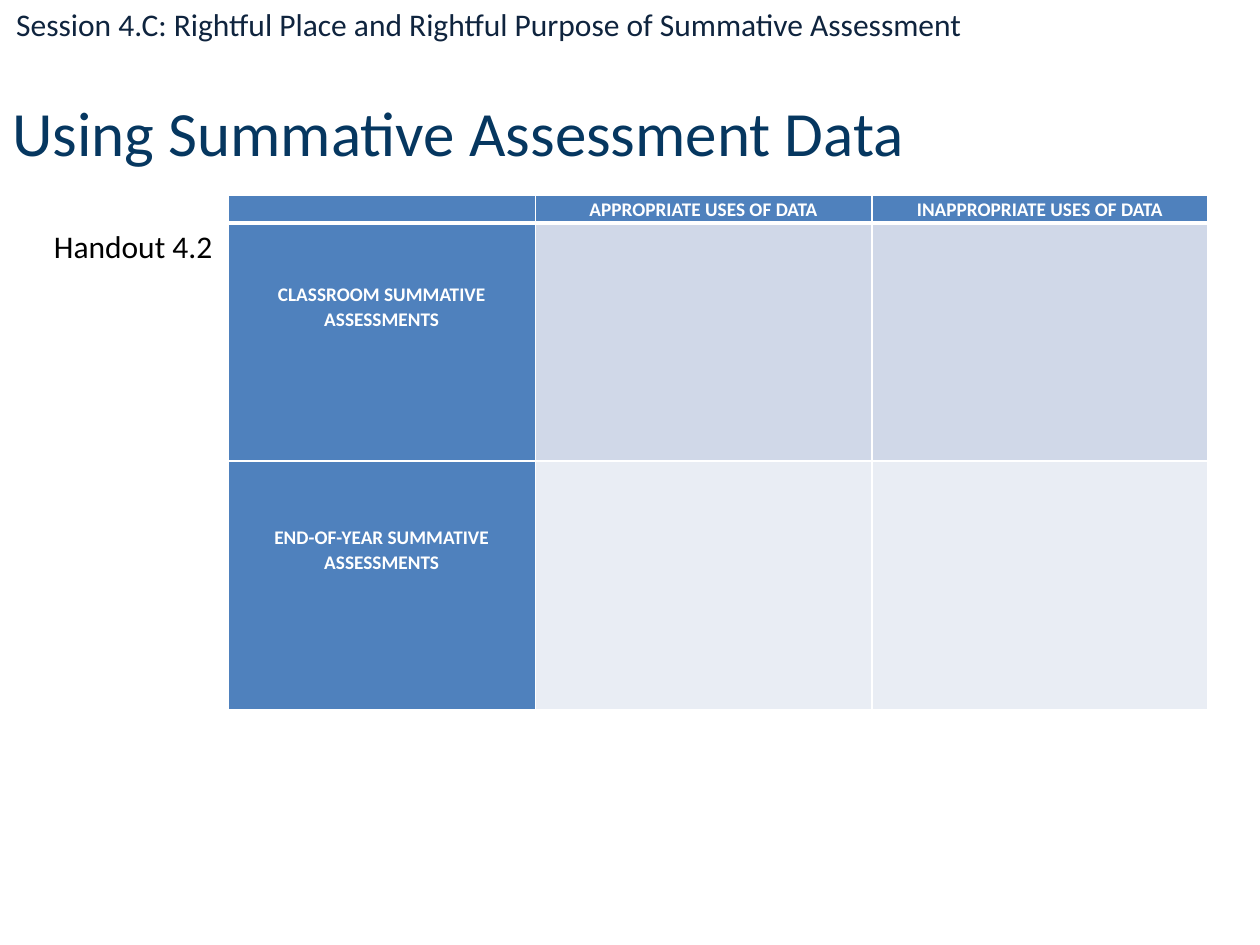
from lxml import etree
from pptx import Presentation
from pptx.dml.color import RGBColor
from pptx.enum import text
from pptx.oxml import ns
from pptx.util import Inches, Pt

FONT = "Calibri"
WHITE = RGBColor(0xFF, 0xFF, 0xFF)
BLACK = RGBColor(0, 0, 0)
TITLE_BLUE = RGBColor(0x06, 0x37, 0x60)
SESSION_NAVY = RGBColor(0x0F, 0x24, 0x3E)
HEADER_BLUE = RGBColor(0x4F, 0x81, 0xBD)
BAND_DARK = RGBColor(0xD0, 0xD8, 0xE8)
BAND_LIGHT = RGBColor(0xE9, 0xED, 0xF4)

COLUMN_WIDTHS = [2.44, 2.67, 2.67]
ROW_HEIGHTS = [0.22, 1.89, 1.97]
ROWS = [
    ["", "APPROPRIATE USES OF DATA", "INAPPROPRIATE USES OF DATA"],
    ["CLASSROOM SUMMATIVE ASSESSMENTS", "", ""],
    ["END-OF-YEAR SUMMATIVE ASSESSMENTS", "", ""],
]
ROW_FILLS = [HEADER_BLUE, BAND_DARK, BAND_LIGHT]
CELL_SIZE = 11
LABEL_LIFT = 0.56  # bottom margin that raises the row labels above centre


def write(frame, words, size, color, bold=False, align=None, line_spacing=None):
    paragraph = frame.paragraphs[0]
    paragraph.alignment = align
    paragraph.line_spacing = line_spacing
    run = paragraph.add_run()
    run.text = words
    run.font.name = FONT
    run.font.size = Pt(size)
    run.font.bold = bold
    run.font.color.rgb = color


def add_label(slide, words, left, top, width, height, wrap=False,
              anchor=text.MSO_ANCHOR.TOP, **style):
    box = slide.shapes.add_textbox(*map(Inches, (left, top, width, height)))
    box.text_frame.word_wrap = wrap
    box.text_frame.vertical_anchor = anchor
    write(box.text_frame, words, **style)


def set_borders(cell, widths):
    """Draw white cell borders; widths maps L, R, T, B to points."""
    properties = cell._tc.get_or_add_tcPr()
    for side in "LRTB":
        line = etree.SubElement(properties, ns.qn(f"a:ln{side}"), w=str(Pt(widths[side])))
        fill = etree.SubElement(line, ns.qn("a:solidFill"))
        etree.SubElement(fill, ns.qn("a:srgbClr"), val=str(WHITE))


def format_cell(cell, words, row, column):
    is_row_label = row > 0 and column == 0
    set_borders(cell, {"L": 1, "R": 1,
                       "T": 3 if row == 1 else 1,
                       "B": 3 if row == 0 else 1})
    cell.fill.solid()
    cell.fill.fore_color.rgb = HEADER_BLUE if is_row_label else ROW_FILLS[row]
    cell.vertical_anchor = text.MSO_ANCHOR.MIDDLE
    cell.margin_left = cell.margin_right = Inches(0.07)
    cell.margin_top = 0
    cell.margin_bottom = Inches(LABEL_LIFT if is_row_label else 0)
    if words:
        write(cell.text_frame, words, CELL_SIZE, WHITE, bold=True,
              align=text.PP_ALIGN.CENTER, line_spacing=1.06)
    else:
        # An empty cell needs a small font so that it does not stretch its row.
        end = etree.SubElement(cell.text_frame.paragraphs[0]._p, ns.qn("a:endParaRPr"))
        end.set("sz", str(CELL_SIZE * 100))


def add_uses_table(slide, left, top):
    table = slide.shapes.add_table(
        len(ROWS), len(COLUMN_WIDTHS), Inches(left), Inches(top),
        Inches(sum(COLUMN_WIDTHS)), Inches(sum(ROW_HEIGHTS))).table
    table.first_col = True
    for column, width in zip(table.columns, COLUMN_WIDTHS):
        column.width = Inches(width)
    for row, height in zip(table.rows, ROW_HEIGHTS):
        row.height = Inches(height)
    for r, row_words in enumerate(ROWS):
        for c, words in enumerate(row_words):
            format_cell(table.cell(r, c), words, r, c)


def main():
    deck = Presentation()
    deck.slide_width, deck.slide_height = Inches(10), Inches(7.5)
    slide = deck.slides.add_slide(deck.slide_layouts[6])
    add_label(slide, "Using Summative Assessment Data", 0, 0.54, 9.83, 1,
              wrap=True, anchor=text.MSO_ANCHOR.MIDDLE, size=36, color=TITLE_BLUE)
    add_uses_table(slide, 1.81, 1.55)
    add_label(slide, "Handout 4.2", 0.33, 1.75, 1.47, 0.4, size=18, color=BLACK)
    add_label(slide, "Session 4.C: Rightful Place and Rightful Purpose of Summative Assessment",
              0.03, -0.01, 7.92, 0.4, size=18, color=SESSION_NAVY)
    deck.save("out.pptx")


if __name__ == "__main__":
    main()
